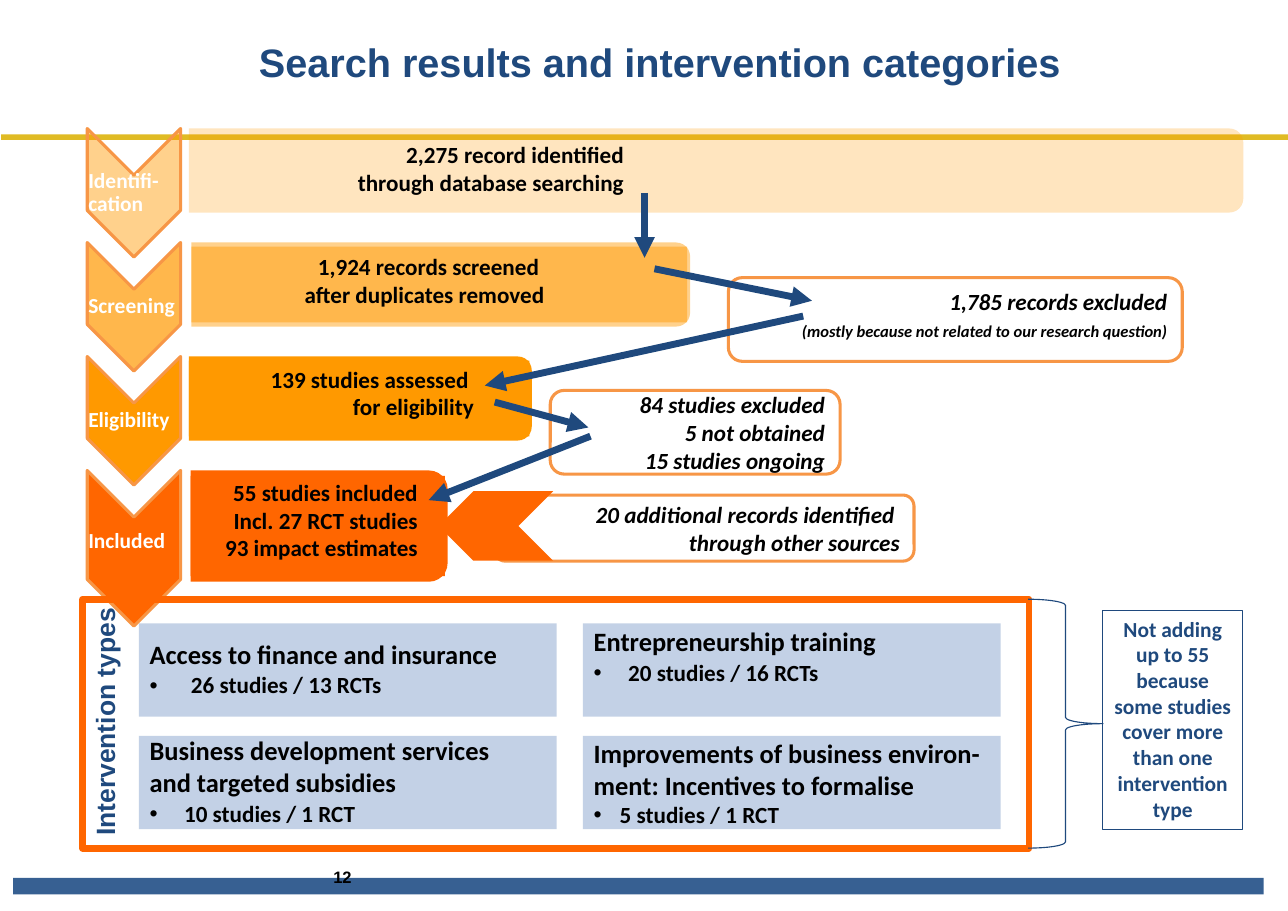
from pptx import Presentation
from pptx.dml.color import RGBColor
from pptx.enum.shapes import MSO_CONNECTOR, MSO_SHAPE
from pptx.enum.text import MSO_ANCHOR, PP_ALIGN
from pptx.oxml.ns import qn
from pptx.util import Pt
from lxml.etree import SubElement

NAVY, AMBER, ORANGE, PEACH = "1F497D", "FF9900", "FF6600", "F79646"
WHITE, BLACK = "FFFFFF", "000000"
LEFT, CENTER, RIGHT = PP_ALIGN.LEFT, PP_ALIGN.CENTER, PP_ALIGN.RIGHT


def rgb(hex_string):
    return RGBColor.from_string(hex_string)


class FlowSlide:
    """Draws styled flow-chart elements, in points, on one slide."""

    def __init__(self, slide):
        self.shapes = slide.shapes

    def shape(self, preset, left, top, width, height, fill=None, alpha=100,
              line=None, weight=2, turn=0):
        if turn == 90:
            left, top = left + (width - height) / 2, top + (height - width) / 2
            width, height = height, width
        part = self.shapes.add_shape(preset, Pt(left), Pt(top), Pt(width), Pt(height))
        part.shadow.inherit = False
        part.rotation = turn
        if fill:
            part.fill.solid()
            part.fill.fore_color.rgb = rgb(fill)
            if alpha < 100:
                color = part.fill._xPr.find(qn("a:solidFill"))[0]
                SubElement(color, qn("a:alpha"), val=str(alpha * 1000))
        else:
            part.fill.background()
        if line:
            part.line.color.rgb = rgb(line)
            part.line.width = Pt(weight)
        else:
            part.line.fill.background()
        return part

    def text(self, left, top, width, height, lines, margin=None, turn=0, **style):
        box = self.shapes.add_textbox(Pt(left), Pt(top), Pt(width), Pt(height))
        box.rotation = turn
        if margin is not None:
            frame = box.text_frame
            frame.margin_left = frame.margin_right = Pt(margin)
            frame.margin_top = frame.margin_bottom = Pt(margin)
        self.label(box, lines, **style)

    def label(self, part, lines, anchor=MSO_ANCHOR.MIDDLE, **style):
        frame = part.text_frame
        frame.word_wrap = True
        frame.vertical_anchor = anchor
        for index, line in enumerate(lines):
            paragraph = frame.paragraphs[0] if index == 0 else frame.add_paragraph()
            self.paragraph(paragraph, line, **style)

    def paragraph(self, paragraph, words, size=15.1, color=BLACK, align=RIGHT,
                  face="Calibri", italic=False, spacing=1, after=0, before=0,
                  indent=0, bullet=False):
        paragraph.text = words
        paragraph.alignment = align
        paragraph.line_spacing = spacing
        paragraph.space_after = Pt(after)
        paragraph.space_before = Pt(before)
        if indent:
            properties = paragraph._p.get_or_add_pPr()
            properties.set("marL", str(Pt(indent)))
            if bullet:
                properties.set("indent", str(-Pt(indent)))
                SubElement(properties, qn("a:buFont"), typeface="Arial")
                SubElement(properties, qn("a:buChar"), char="•")
        font = paragraph.font
        font.name, font.size, font.bold, font.italic = face, Pt(size), True, italic
        font.color.rgb = rgb(color)

    def arrow(self, x1, y1, x2, y2):
        link = self.shapes.add_connector(
            MSO_CONNECTOR.STRAIGHT, Pt(x1), Pt(y1), Pt(x2), Pt(y2))
        link.line.color.rgb = rgb(NAVY)
        link.line.width = Pt(4.5)
        SubElement(link.line._get_or_add_ln(), qn("a:tailEnd"), type="triangle")
        SubElement(link._element.spPr, qn("a:effectLst"))

    def stage(self, name, top, height, fill, arrow_alpha, bar, bar_alpha, core):
        self.shape(MSO_SHAPE.CHEVRON, 57, top, 61, height + 29, fill, arrow_alpha,
                   PEACH, turn=90)
        self.text(57, top + 29.5, 61, 25 + (height - 55) / 2, [name], margin=0.7,
                  size=14, color=WHITE, align=LEFT, spacing=0.9)
        left, width = bar
        self.shape(MSO_SHAPE.ROUND_2_SAME_RECTANGLE, left, top, width, height,
                   fill, bar_alpha, turn=90)
        if core:
            core_width, inset = core
            self.shape(MSO_SHAPE.RECTANGLE, left, top + inset, core_width,
                       height - 2 * inset, fill, bar_alpha)

    def excluded(self, left, top, width, height, lines, **style):
        box = self.shape(MSO_SHAPE.ROUNDED_RECTANGLE, left, top, width, height,
                         WHITE, 90, PEACH)
        self.label(box, lines, italic=True, **style)
        return box

    def category(self, left, top, heading, studies, indent, spacing, after, anchor):
        box = self.shape(MSO_SHAPE.RECTANGLE, left, top, 273, 61, "7C9BC8", 45)
        self.label(box, heading, anchor, size=17.3, align=LEFT, spacing=spacing,
                   after=after)
        self.paragraph(box.text_frame.add_paragraph(), studies, align=LEFT,
                       spacing=spacing, after=after, indent=indent, bullet=True)


def main():
    deck = Presentation()
    deck.slide_width, deck.slide_height = Pt(841.68), Pt(595.44)
    flow = FlowSlide(deck.slides.add_slide(deck.slide_layouts[6]))

    flow.shape(MSO_SHAPE.RECTANGLE, 8.6, 573.8, 817.2, 10.8, "376092")
    flow.shape(MSO_SHAPE.RECTANGLE, 0.7, 87.8, 841, 3.6, "E0BB24")
    flow.text(40.3, 565.2, 196.6, 15.8, ["12"], size=10.8, face="Arial")
    flow.text(169.2, 24.5, 667.4, 74.9, ["Search results and intervention categories"],
              margin=0, anchor=MSO_ANCHOR.TOP, size=25.9, color=NAVY, align=LEFT,
              face="Arial")

    stages = [
        ("Identifi-cation", 55, AMBER, 45, (123.5, 689), 25, None),
        ("Screening", 55, AMBER, 70, (125, 326), 45, (324, 2.7)),
        ("Eligibility", 55, AMBER, 100, (123.5, 224), 100, (222.5, 2.7)),
        ("Included", 72.7, ORANGE, 100, (124.5, 168), 100, (166.3, 3.6)),
    ]
    for row, (name, *look) in enumerate(stages):
        flow.stage(name, 84 + 74.5 * row, *look)

    flow.text(180.7, 87.8, 234, 43.9,
              ["2,275 record identified through database searching"], indent=36)
    flow.text(118, 161.3, 244.8, 43.9,
              ["1,924 records screened \vafter duplicates removed"])
    flow.text(117.4, 234.7, 199.4, 43.9, ["139 studies assessed \vfor eligibility"])
    flow.text(108.7, 308.9, 171.4, 61.9,
              ["55 studies included", "Incl. 27 RCT studies", "93 impact estimates"])

    flow.excluded(323, 323.6, 274.3, 43.2,
                  ["20 additional records identified \vthrough other sources"])
    screened_out = flow.excluded(476, 181.5, 296.6, 54.7, ["1,785 records excluded"],
                                 anchor=MSO_ANCHOR.TOP)
    flow.paragraph(screened_out.text_frame.add_paragraph(),
                   "(mostly because not related to our research question)",
                   size=10.8, italic=True, before=4)
    flow.excluded(359.6, 255.2, 189.4, 54.7,
                  ["84 studies excluded", "5 not obtained", "15 studies ongoing"])
    added_records = flow.shape(MSO_SHAPE.CHEVRON, 286.6, 321.1, 74.9, 45.4, ORANGE,
                               turn=180)
    added_records.adjustments[0] = 0.5

    middle, top = MSO_ANCHOR.MIDDLE, MSO_ANCHOR.TOP
    categories = [
        (["Access to finance and insurance"], "26 studies / 13 RCTs",
         27, 0.9, 2.6, middle),
        (["Entrepreneurship training"], "20 studies / 16 RCTs", 22.5, 0.9, 2.6, top),
        (["Business development services", "and targeted subsidies"],
         "10 studies / 1 RCT", 22.5, 0.9, 2.6, middle),
        (["Improvements of business environ-ment: Incentives to formalise"],
         "5 studies / 1 RCT", 17, 1, 0, middle),
    ]
    for index, category in enumerate(categories):
        row, column = divmod(index, 2)
        flow.category(90.7 + 290.2 * column, 407.5 + 73.5 * row, *category)
    flow.shape(MSO_SHAPE.RECTANGLE, 54, 391.7, 618.5, 162.7, line=ORANGE, weight=4.5)

    for ends in [(421.2, 126, 421.2, 168.5), (524.9, 206.6, 316.8, 252),
                 (427.7, 175.7, 530.6, 196.6), (323.3, 262.8, 384.5, 279.4),
                 (385.9, 285.1, 280.1, 326.9)]:
        flow.arrow(*ends)

    flow.text(-38.9, 457.9, 214.6, 28.1, ["Intervention types"], turn=270,
              anchor=top, size=17.3, color=NAVY, align=CENTER, face="Arial")
    overlap_note = flow.shape(MSO_SHAPE.RECTANGLE, 720.7, 398.9, 91.4, 143.3,
                              line=NAVY, weight=0.75)
    flow.label(overlap_note, ["Not adding up to 55 because some studies cover more "
                              "than one intervention type"],
               anchor=top, size=14, color=NAVY, align=CENTER)
    flow.shape(MSO_SHAPE.RIGHT_BRACE, 671.8, 391.7, 49, 162.7, line=NAVY, weight=0.75)

    deck.save("out.pptx")


if __name__ == "__main__":
    main()
